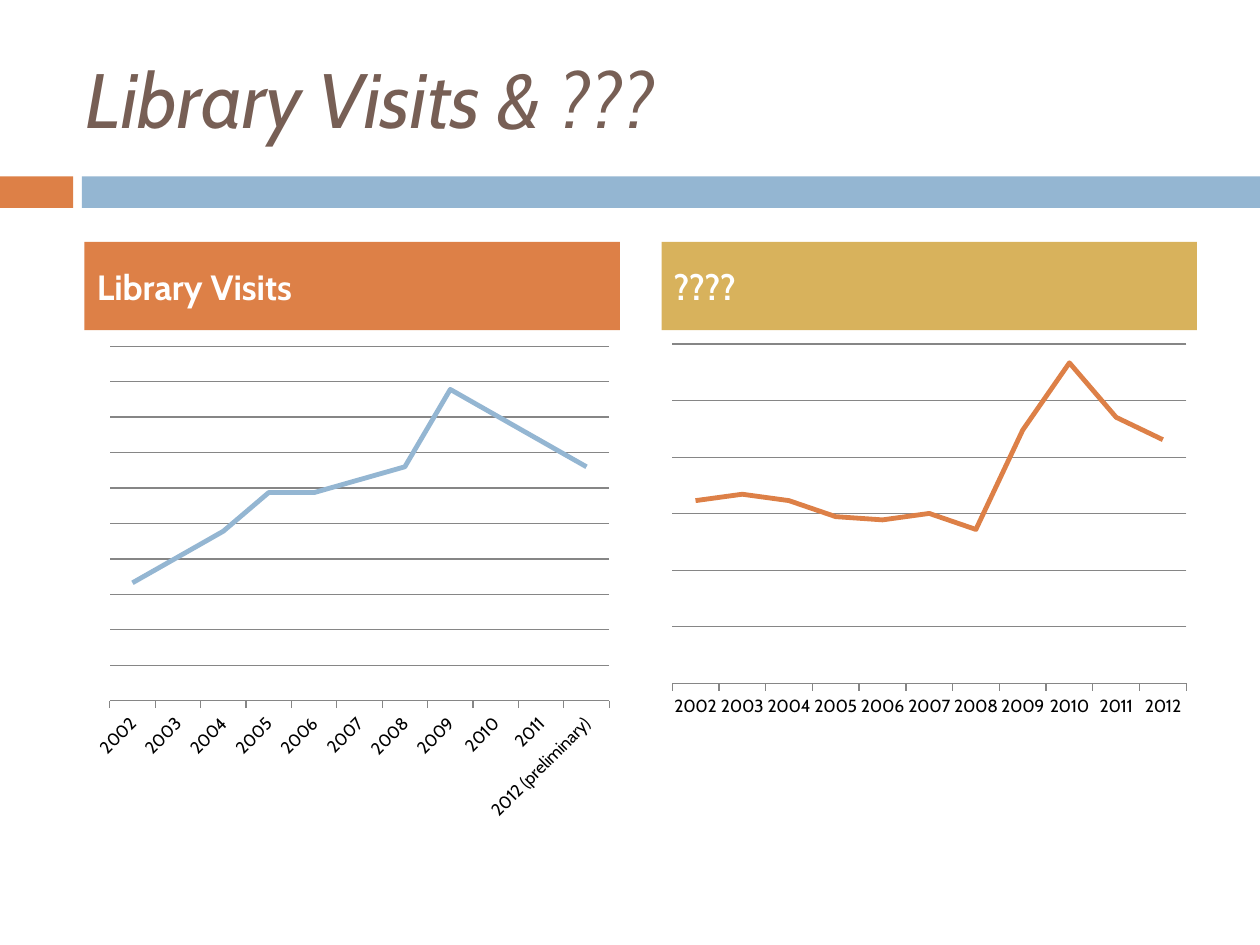
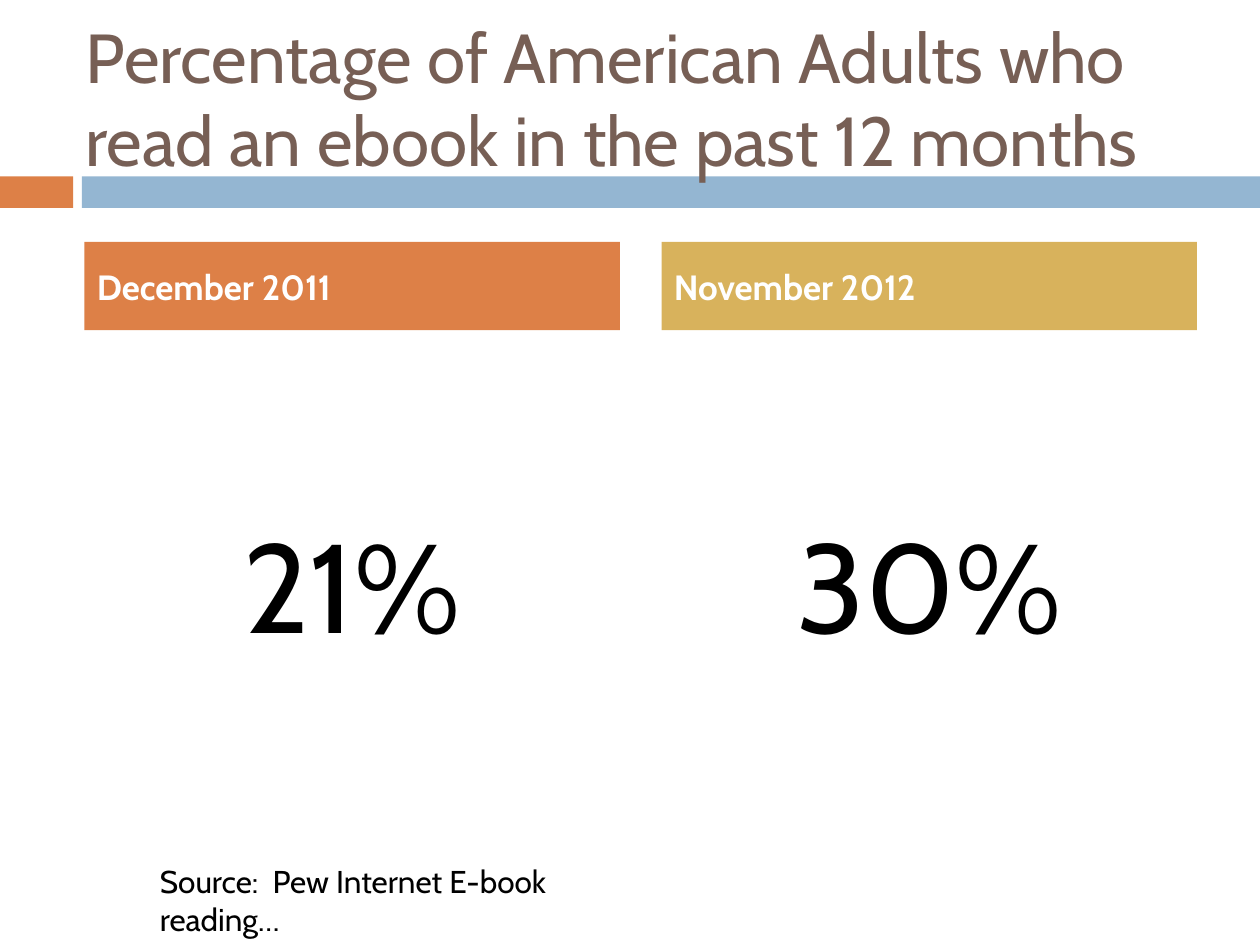
"""Build two slides on library visits and ebook reading."""
from pptx import Presentation
from pptx.chart.data import CategoryChartData as Data
from pptx.dml.color import RGBColor
from pptx.enum.chart import XL_CHART_TYPE as Kind, XL_TICK_MARK as Tick
from pptx.enum.shapes import MSO_SHAPE as Shape
from pptx.enum.text import MSO_ANCHOR as Anchor, PP_ALIGN as Align
from pptx.util import Inches, Pt

FONT = "Cabin"
ORANGE, BLUE, GOLD = "DD8047", "94B6D2", "D8B25C"
BROWN, GRAY, BLACK, WHITE = "775F55", "868686", "000000", "FFFFFF"
LEFTS = (0.67, 5.25)
WIDE, HEAD_TOP, BODY_TOP, BODY_HIGH = 4.25, 1.92, 2.67, 3.92
BANDS = [(0, 0.58, ORANGE), (0.65, 9.35, BLUE)]

YEARS = [str(year) for year in range(2002, 2012)]
CHARTS = [
    dict(cats=YEARS + ["2012 (preliminary)"], color=BLUE, high=BODY_HIGH,
         vals=[85, 87, 89, 92, 92, 93, 94, 100, 98, 96, 94],
         low=75.85, step=2.75, count=10),
    dict(cats=YEARS + ["2012"], color=ORANGE, high=3.08,
         vals=[57, 59, 57, 52, 51, 53, 48, 79, 100, 83, 76],
         low=0, step=17.64, count=6),
]
SLIDES = [
    dict(title="Library Visits & ???", size=44, italic=True,
         heads=["Library Visits", "????"], charts=CHARTS),
    dict(title="Percentage of American Adults who read an ebook in the past 12 months",
         size=39.6, heads=["December 2011", "November 2012"],
         shares=["21%", "30%"], source="Source:  Pew Internet E-book reading…"),
]


def rgb(code):
    return RGBColor.from_string(code)


def write(shape, text, size=18, color=BLACK, bold=False, italic=False,
          align=Align.LEFT, anchor=Anchor.MIDDLE):
    frame = shape.text_frame
    frame.word_wrap = True
    frame.vertical_anchor = anchor
    para = frame.paragraphs[0]
    para.text, para.alignment = text, align
    font = para.font
    font.name, font.size, font.bold, font.italic = FONT, Pt(size), bold, italic
    font.color.rgb = rgb(color)


def add_box(slide, *place):
    return slide.shapes.add_textbox(*map(Inches, place))


def add_bar(slide, fill, *place):
    bar = slide.shapes.add_shape(Shape.RECTANGLE, *map(Inches, place))
    bar.shadow.inherit = False
    bar.fill.solid()
    bar.fill.fore_color.rgb = rgb(fill)
    bar.line.fill.background()
    return bar


def add_line(slide, left, cats, vals, color, high, low, step, count):
    data = Data()
    data.categories = cats
    data.add_series("Series 1", vals)
    place = map(Inches, (left, BODY_TOP, WIDE, high))
    chart = slide.shapes.add_chart(Kind.LINE, *place, data).chart
    chart.has_legend = chart.has_title = False
    chart.font.name, chart.font.size = FONT, Pt(10)
    chart.font.color.rgb = rgb(BLACK)
    chart.plots[0].vary_by_categories = False
    trend = chart.plots[0].series[0]
    trend.smooth = False
    trend.format.line.width = Pt(2.75)
    trend.format.line.color.rgb = rgb(color)
    scale, years = chart.value_axis, chart.category_axis
    scale.visible = False
    scale.has_major_gridlines = True
    scale.minimum_scale, scale.maximum_scale = low, low + step * count
    scale.major_unit = step
    years.major_tick_mark = Tick.OUTSIDE
    for rule in (scale.major_gridlines.format.line, years.format.line):
        rule.width = Pt(0.75)
        rule.color.rgb = rgb(GRAY)


def build(slide, title, size, heads, italic=False, charts=(), shares=(), source=""):
    for left, wide, fill in BANDS:
        add_bar(slide, fill, left, 1.4, wide, 0.25)
    write(add_box(slide, 0.58, 0.3, 8.92, 0.95), title, size=size,
          color=BROWN, italic=italic)
    for left, head, fill in zip(LEFTS, heads, (ORANGE, GOLD)):
        bar = add_bar(slide, fill, left, HEAD_TOP, WIDE, 0.7)
        write(bar, head, size=20, color=WHITE, bold=True)
    for left, chart in zip(LEFTS, charts):
        add_line(slide, left, **chart)
    for left, share in zip(LEFTS, shares):
        write(add_box(slide, left, BODY_TOP, WIDE, BODY_HIGH), share, size=72,
              align=Align.CENTER)
    if source:
        write(add_box(slide, 1.17, 6.79, 4.18, 0.4), source, anchor=Anchor.TOP)


def main():
    deck = Presentation()
    deck.slide_width, deck.slide_height = Inches(10), Inches(7.5)
    for page in SLIDES:
        build(deck.slides.add_slide(deck.slide_layouts[6]), **page)
    deck.save("out.pptx")


if __name__ == "__main__":
    main()
